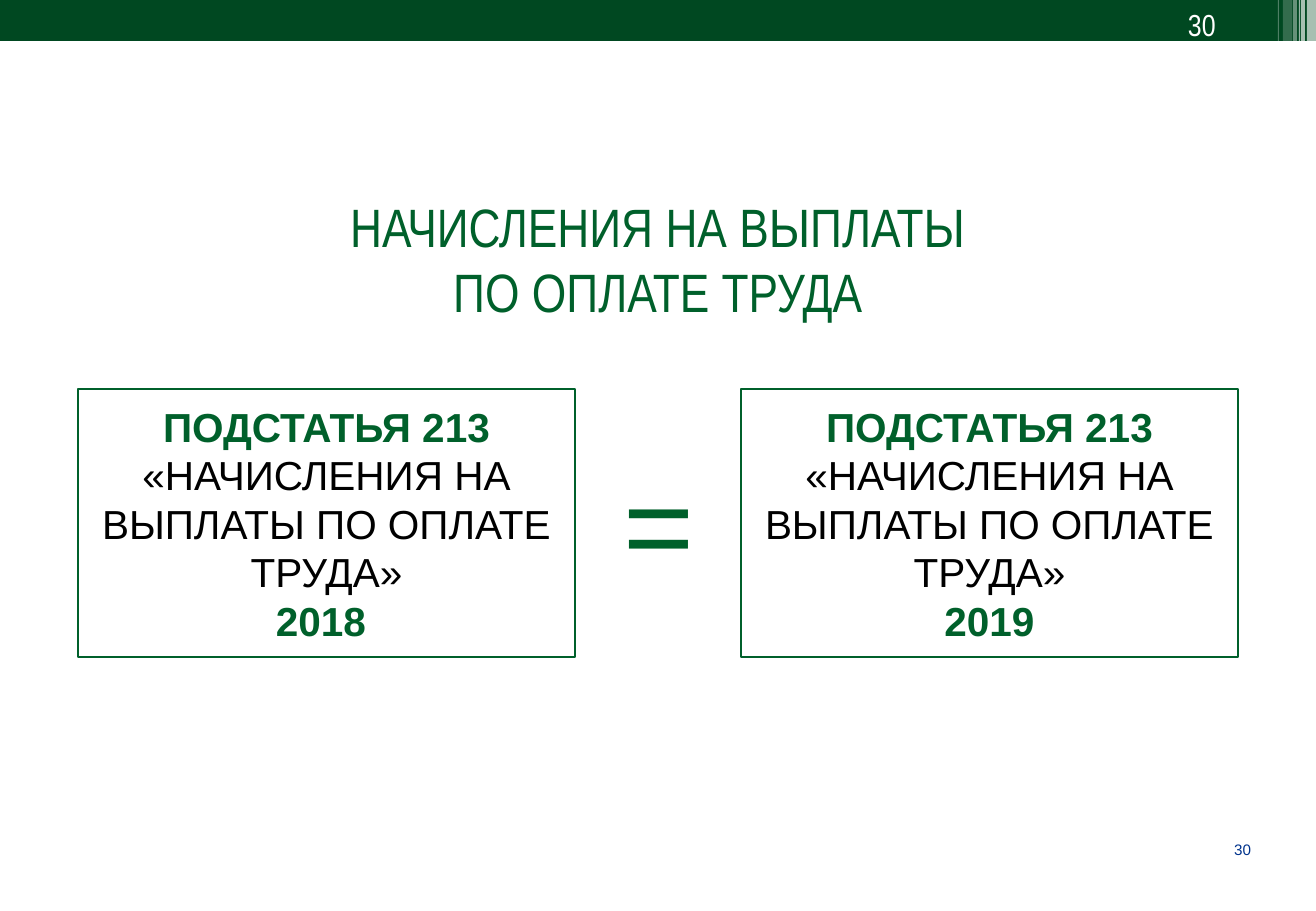
import pptx
import pptx.util
import pptx.dml.color
import pptx.enum.shapes
import pptx.enum.text
import pptx.oxml.ns
import lxml.etree

PX = 7526  # EMU in one px
GREEN, DARK_GREEN, BLUE = "00602B", "004821", "00338D"
WHITE, BLACK = "FFFFFF", "000000"
ALIGN = pptx.enum.text.PP_ALIGN
ANCHOR = pptx.enum.text.MSO_ANCHOR


def color(value):
    return pptx.dml.color.RGBColor.from_string(value)


def place(box):
    return [pptx.util.Emu(length * PX) for length in box]


def add_rect(page, box, fill, line=None, opacity=100):
    rect = page.shapes.add_shape(pptx.enum.shapes.MSO_SHAPE.RECTANGLE, *place(box))
    rect.shadow.inherit = False
    rect.fill.solid()
    rect.fill.fore_color.rgb = color(fill)
    if opacity < 100:
        tint = rect.fill._xPr.find(".//" + pptx.oxml.ns.qn("a:srgbClr"))
        alpha = lxml.etree.SubElement(tint, pptx.oxml.ns.qn("a:alpha"))
        alpha.set("val", str(opacity * 1000))
    if line:
        rect.line.color.rgb = color(line)
        rect.line.width = pptx.util.Pt(1)
    else:
        rect.line.fill.background()
    return rect


def write(shape, paras, size, font="Arial", align=ALIGN.LEFT, anchor=ANCHOR.TOP,
          wrap=True, inset=True):
    """Each paragraph is a list of (text, colour, bold)."""
    frame = shape.text_frame
    frame.word_wrap = wrap
    frame.vertical_anchor = anchor
    if not inset:
        frame.margin_left = frame.margin_right = 0
        frame.margin_top = frame.margin_bottom = 0
    for index, spans in enumerate(paras):
        para = frame.add_paragraph() if index else frame.paragraphs[0]
        para.alignment = align
        for text, ink, bold in spans:
            span = para.add_run()
            span.text = text
            span.font.name = font
            span.font.size = pptx.util.Pt(size)
            span.font.bold = bold
            span.font.color.rgb = color(ink)


def add_text(page, box, lines, size, ink, **style):
    shape = page.shapes.add_textbox(*place(box))
    write(shape, [[(line, ink, False)] for line in lines], size, **style)


def header(page, box, number):
    left, top, width, height = box
    right = left + width
    add_rect(page, box, DARK_GREEN)
    # Translucent stripes: distance from the right edge, width, opacity
    for offset, stripe, opacity in ((9, 9, 65), (15, 4, 65), (17, 1, 60),
                                    (23, 4, 40), (33, 9, 20), (38, 1, 30)):
        add_rect(page, (right - offset, top, stripe, height), WHITE, opacity=opacity)
    add_text(page, (right - 140, top, 109, 49), [number], 18, WHITE, font="Arial Narrow")


def article_card(page, box, year):
    card = add_rect(page, box, WHITE, line=GREEN)
    article = [("ПОДСТАТЬЯ 213 ", GREEN, True),
               ("«НАЧИСЛЕНИЯ НА ВЫПЛАТЫ ПО ОПЛАТЕ ТРУДА»", BLACK, False)]
    write(card, [article, [(year, GREEN, True)]], 24, align=ALIGN.CENTER,
          anchor=ANCHOR.MIDDLE)


def comparison(page, box):
    left, top, width, height = box
    card_width = 497
    # Equal cards at both ends
    article_card(page, (left, top, card_width, height), "2018 ")
    article_card(page, (left + width - card_width, top, card_width, height), "2019")
    # Equals sign between them
    add_text(page, (left + 534, top + 53, 96, 159), ["="], 72, GREEN, wrap=False)


def main():
    deck = pptx.Presentation()
    deck.slide_width, deck.slide_height = place((1316, 911))
    page = deck.slides.add_slide(deck.slide_layouts[6])
    # Page number at the foot
    add_text(page, (1199, 840, 52, 19), ["30"], 9, BLUE, align=ALIGN.RIGHT, inset=False)
    header(page, (0, 0, 1316, 41), "30")
    # Title
    add_text(page, (0, 188, 1316, 143), ["НАЧИСЛЕНИЯ НА ВЫПЛАТЫ", "ПО ОПЛАТЕ ТРУДА"],
             32, GREEN, font="Arial Narrow", align=ALIGN.CENTER)
    comparison(page, (78, 389, 1160, 268))
    deck.save("out.pptx")


if __name__ == "__main__":
    main()
